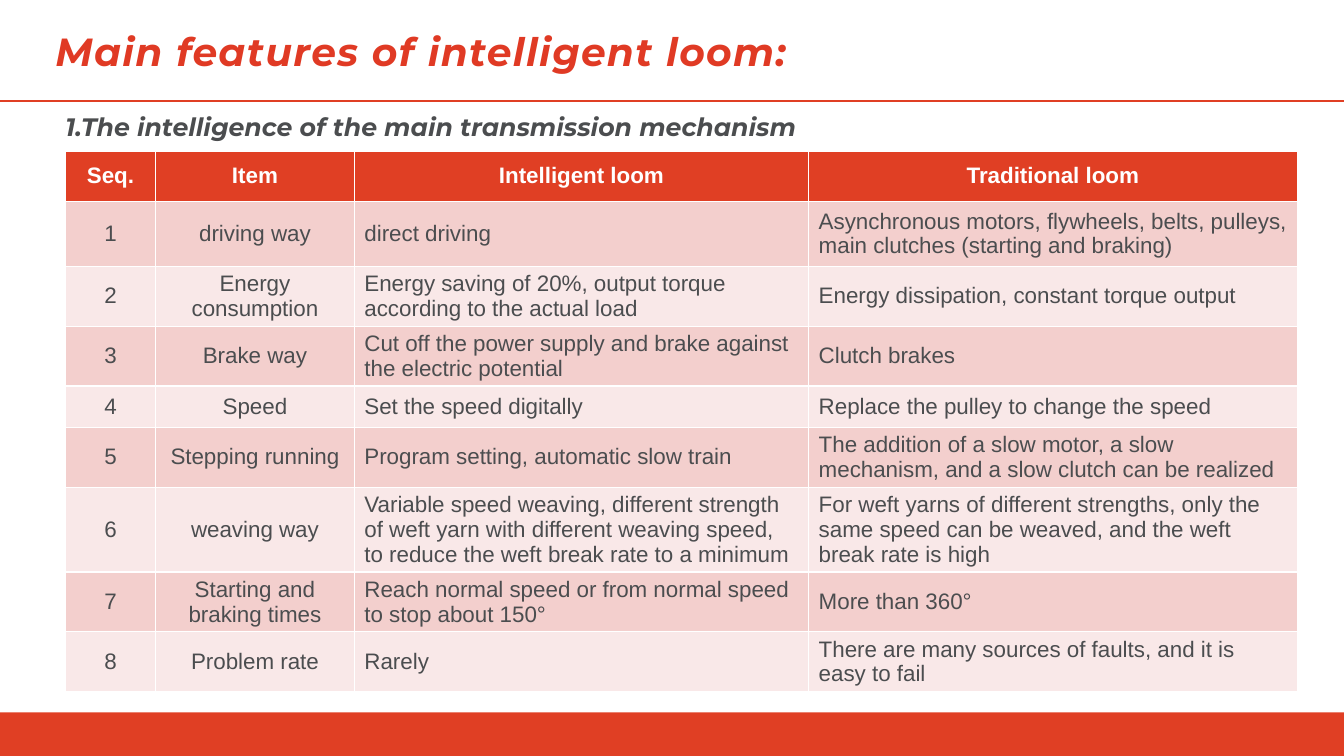
from pptx import Presentation
from pptx.dml.color import RGBColor
from pptx.enum.shapes import MSO_CONNECTOR as Line, MSO_SHAPE as Kind
from pptx.enum.text import MSO_ANCHOR as Anchor, PP_ALIGN as Align
from pptx.util import Cm, Pt
from lxml import etree

RED = RGBColor(0xE0, 0x3F, 0x24)
TITLE = RGBColor(0xE0, 0x3A, 0x24)
GREY = RGBColor(0x4B, 0x4D, 0x4F)
WHITE = RGBColor(0xFF, 0xFF, 0xFF)
ROSE = RGBColor(0xF3, 0xCF, 0xCD)
PALE = RGBColor(0xF9, 0xE8, 0xE8)
MAIN = "http://schemas.openxmlformats.org/drawingml/2006/main"


def add_run(para, text, size, face, color, bold=False, slant=False):
    run = para.add_run()
    run.text = text
    font = run.font
    font.size = Pt(size)
    font.name = face
    font.color.rgb = color
    font.bold = bold
    font.italic = slant
    return run


deck = Presentation()
deck.slide_width = Cm(33.87)
deck.slide_height = Cm(19.05)
slide = deck.slides.add_slide(deck.slide_layouts[5])
shapes = slide.shapes

foot = shapes.add_shape(Kind.RECTANGLE, 0, Cm(17.95), deck.slide_width, Cm(1.1))
foot.shadow.inherit = False
foot.fill.solid()
foot.fill.fore_color.rgb = RED
foot.line.fill.background()

rule = shapes.add_connector(Line.STRAIGHT, 0, Cm(2.54), deck.slide_width, Cm(2.54))
rule.line.color.rgb = RED
rule.line.width = Pt(1.5)
etree.SubElement(rule._element.spPr, f"{{{MAIN}}}effectLst")

title = shapes.title
title.left, title.top, title.width, title.height = Cm(1.14), Cm(0.69), Cm(30.43), Cm(2.2)
title.text_frame.vertical_anchor = Anchor.TOP
para = title.text_frame.paragraphs[0]
para.alignment = Align.LEFT
para.line_spacing = 0.9
run = add_run(para, "Main features of intelligent loom:", 28, "Montserrat", TITLE, True, True)
run.font._element.set("spc", "100")

rows = [
    ("Seq.", "Item", "Intelligent loom", "Traditional loom"),
    ("1", "driving way", "direct driving",
     "Asynchronous motors, flywheels, belts, pulleys, main clutches (starting and braking)"),
    ("2", "Energy consumption",
     "Energy saving of 20%, output torque according to the actual load",
     "Energy dissipation, constant torque output"),
    ("3", "Brake way",
     "Cut off the power supply and brake against the electric potential",
     "Clutch brakes"),
    ("4", "Speed", "Set the speed digitally", "Replace the pulley to change the speed"),
    ("5", "Stepping running", "Program setting, automatic slow train",
     "The addition of a slow motor, a slow mechanism, and a slow clutch can be realized"),
    ("6", "weaving way",
     "Variable speed weaving, different strength of weft yarn with different weaving speed, "
     "to reduce the weft break rate to a minimum",
     "For weft yarns of different strengths, only the same speed can be weaved, "
     "and the weft break rate is high"),
    ("7", "Starting and braking times",
     "Reach normal speed or from normal speed to stop about 150°",
     "More than 360°"),
    ("8", "Problem rate", "Rarely",
     "There are many sources of faults, and it is easy to fail"),
]
widths = [2.27, 5.01, 11.45, 12.31]
heights = [1.26, 1.64] + [1.04] * 7

frame = shapes.add_table(len(rows), len(widths), Cm(1.65), Cm(3.81),
                         Cm(sum(widths)), Cm(sum(heights)))
table = frame.table
for col, width in zip(table.columns, widths):
    col.width = Cm(width)
for r, (texts, height) in enumerate(zip(rows, heights)):
    table.rows[r].height = Cm(height)
    head = r == 0
    fill = RED if head else ROSE if r % 2 else PALE
    for c, text in enumerate(texts):
        cell = table.cell(r, c)
        cell.fill.solid()
        cell.fill.fore_color.rgb = fill
        cell.vertical_anchor = Anchor.MIDDLE
        para = cell.text_frame.paragraphs[0]
        para.alignment = Align.CENTER if head or c < 2 else Align.LEFT
        add_run(para, text, 16, "Arial", WHITE if head else GREY, head)

label = shapes.add_textbox(Cm(1.4), Cm(2.69), Cm(19.91), Cm(1.02))
label.text_frame.word_wrap = False
add_run(label.text_frame.paragraphs[0],
        "1.The intelligence of the main transmission mechanism",
        18, "Montserrat", GREY, True, True)

deck.save("out.pptx")
